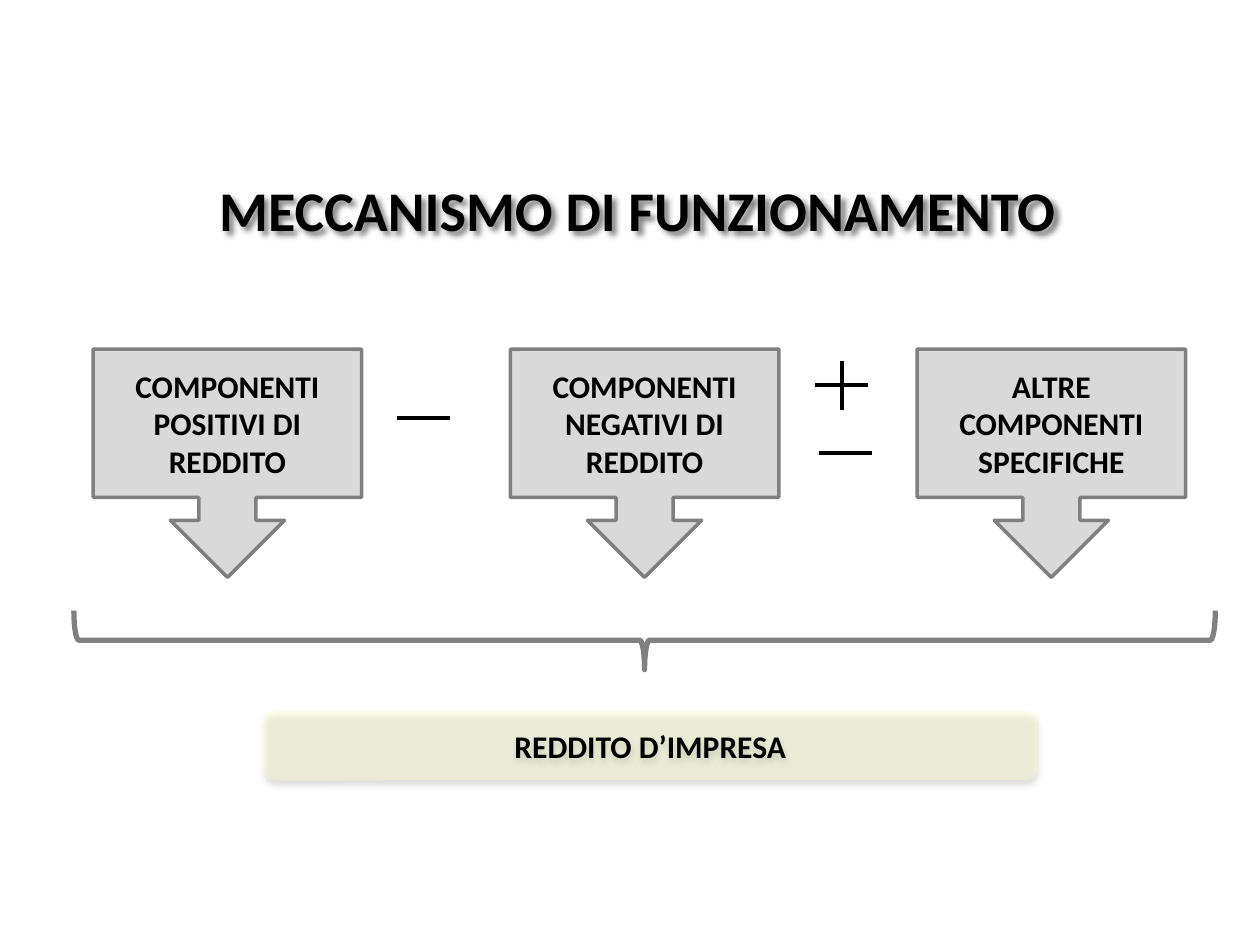
from lxml.etree import SubElement
from pptx import Presentation
from pptx.dml.color import RGBColor
from pptx.enum.shapes import MSO_CONNECTOR, MSO_SHAPE
from pptx.enum.text import MSO_ANCHOR, PP_ALIGN
from pptx.oxml.ns import qn
from pptx.util import Cm, Pt

BLACK, GREY, LIGHT_GREY, CREAM = "000000", "808080", "D9D9D9", "FFFFCC"


def color(value):
    return RGBColor.from_string(value)


def set_values(target, values):
    for name, value in values.items():
        setattr(target, name, value)


def add_effects(shape):
    return SubElement(shape._element.spPr, qn("a:effectLst"))


def add_alpha(color_element, percent):
    SubElement(color_element, qn("a:alpha"), val=str(percent * 1000))


def add_shadow(shape, blur, distance, degrees, opacity):
    shadow = SubElement(
        add_effects(shape), qn("a:outerShdw"), blurRad=str(Pt(blur)),
        dist=str(Pt(distance)), dir=str(degrees * 60000), rotWithShape="0")
    add_alpha(SubElement(shadow, qn("a:srgbClr"), val=BLACK), opacity)


def set_text(shape, text, size, **frame_values):
    frame = shape.text_frame
    set_values(frame, {"word_wrap": True, **frame_values})
    para = frame.paragraphs[0]
    para.alignment = PP_ALIGN.CENTER
    span = para.add_run()
    span.text = text
    set_values(span.font, {"name": "Calibri", "size": Pt(size), "bold": True})
    span.font.color.rgb = color(BLACK)


def add_title(page, text):
    box = page.shapes.add_textbox(Cm(0.51), Cm(3.53), Cm(24.69), Cm(1.37))
    set_text(box, text, 32, margin_left=0, margin_right=0,
             margin_top=0, margin_bottom=0)
    add_shadow(box, blur=3, distance=3, degrees=45, opacity=50)


def add_figure(page, kind, place, fill=None, line=None, width=0):
    shape = page.shapes.add_shape(kind, *map(Cm, place))
    if fill:
        shape.fill.solid()
        shape.fill.fore_color.rgb = color(fill)
    else:
        shape.fill.background()
    if line:
        shape.line.color.rgb = color(line)
        shape.line.width = Pt(width)
    else:
        shape.line.fill.background()
    return shape


def add_callout(page, left, text):
    callout = add_figure(page, MSO_SHAPE.DOWN_ARROW_CALLOUT,
                         (left, 7.04, 5.41, 4.6), LIGHT_GREY, GREY, 2)
    callout.shadow.inherit = False
    set_text(callout, text, 18, vertical_anchor=MSO_ANCHOR.MIDDLE)


def add_brace(page):
    brace = add_figure(page, MSO_SHAPE.LEFT_BRACE,
                       (12.4, 1.4, 1.19, 23.01), line=GREY, width=3)
    brace.shadow.inherit = False
    brace.rotation = 270


def add_result(page, text):
    result = add_figure(page, MSO_SHAPE.ROUNDED_RECTANGLE,
                        (5.31, 14.33, 15.6, 1.4), CREAM)
    add_alpha(next(result._element.spPr.iter(qn("a:srgbClr"))), 40)
    add_shadow(result, blur=3.5, distance=2.2, degrees=90, opacity=32)
    set_text(result, text, 18, vertical_anchor=MSO_ANCHOR.MIDDLE)


def add_stroke(page, *ends):
    stroke = page.shapes.add_connector(MSO_CONNECTOR.STRAIGHT, *map(Cm, ends))
    stroke.line.color.rgb = color(BLACK)
    stroke.line.width = Pt(2.25)
    add_effects(stroke)


def add_minus(page, left, top):
    add_stroke(page, left, top, left + 1.07, top)


def add_plus(page, left, top):
    add_minus(page, left, top)
    add_stroke(page, left + 0.54, top - 0.5, left + 0.54, top + 0.5)


def main():
    deck = Presentation()
    set_values(deck, {"slide_width": Cm(25.4), "slide_height": Cm(19.05)})
    page = deck.slides.add_slide(deck.slide_layouts[6])

    add_title(page, "MECCANISMO DI FUNZIONAMENTO")
    components = {
        "COMPONENTI POSITIVI DI REDDITO": 1.88,
        "COMPONENTI NEGATIVI DI REDDITO": 10.29,
        "ALTRE COMPONENTI SPECIFICHE": 18.49,
    }
    for text, left in components.items():
        add_callout(page, left, text)
    add_brace(page)
    add_result(page, "REDDITO D’IMPRESA")
    add_minus(page, 8, 8.43)
    add_plus(page, 16.43, 7.77)
    add_minus(page, 16.51, 9.14)

    deck.save("out.pptx")


if __name__ == "__main__":
    main()
